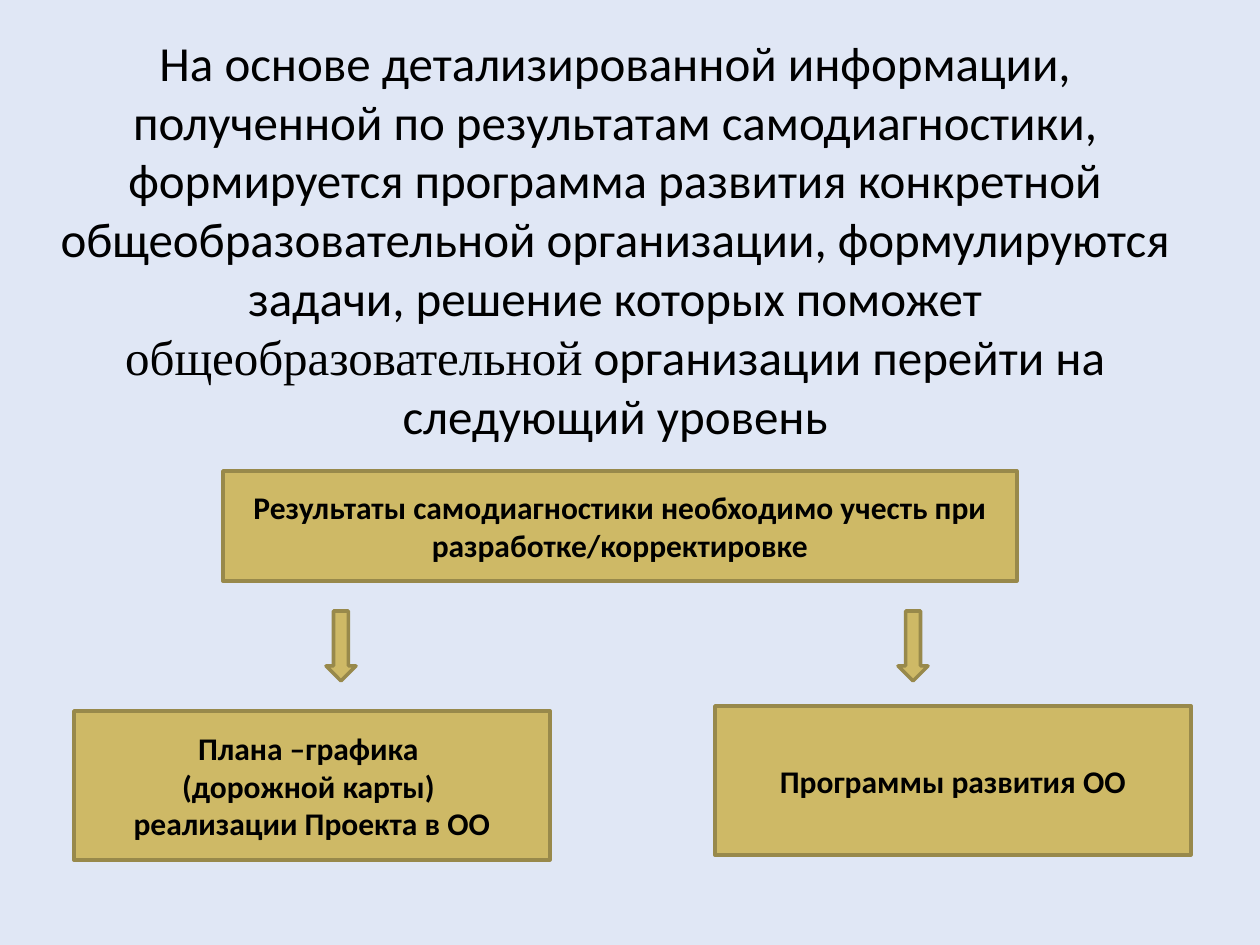
import pptx
import pptx.util
import pptx.dml.color
import pptx.enum.shapes
import pptx.enum.text

SCALE = 914400 / 126
SHAPE = pptx.enum.shapes.MSO_SHAPE
ANCHOR = pptx.enum.text.MSO_ANCHOR
CENTER = pptx.enum.text.PP_ALIGN.CENTER


def px(n):
    return pptx.util.Emu(round(n * SCALE))


def paint(color, code):
    color.rgb = pptx.dml.color.RGBColor.from_string(code)


def style(run, face="Calibri", **form):
    for name, value in {"name": face, **form}.items():
        setattr(run.font, name, value)
    paint(run.font.color, "000000")


def head(slide, box, parts):
    """Place the opening statement, given as (text, font) parts."""
    title = slide.shapes.title
    for name, value in zip(("left", "top", "width", "height"), box):
        setattr(title, name, px(value))
    frame = title.text_frame
    form = {"word_wrap": True, "vertical_anchor": ANCHOR.TOP,
            "auto_size": pptx.enum.text.MSO_AUTO_SIZE.NONE}
    for name, value in form.items():
        setattr(frame, name, value)
    para = frame.paragraphs[0]
    para.alignment = CENTER
    para.space_before = pptx.util.Pt(5.6)
    for text, face in parts:
        run = para.add_run()
        run.text = text
        style(run, face, size=pptx.util.Pt(28), bold=False)


def block(slide, kind, box, lines=()):
    """Add a gold shape with one centred paragraph per line."""
    shape = slide.shapes.add_shape(kind, *map(px, box))
    shape.shadow.inherit = False
    shape.fill.solid()
    paint(shape.fill.fore_color, "CEB966")
    paint(shape.line.color, "98894B")
    shape.line.width = pptx.util.Pt(2)
    frame = shape.text_frame
    frame.word_wrap = True
    frame.vertical_anchor = ANCHOR.MIDDLE
    for i, line in enumerate(lines):
        para = frame.add_paragraph() if i else frame.paragraphs[0]
        para.alignment = CENTER
        run = para.add_run()
        run.text = line
        style(run, size=pptx.util.Pt(18), bold=True)


def chart(slide, box, root, leaves):
    """Draw the root block, with an arrow down to each leaf block."""
    left, top, width, height = box
    block(slide, SHAPE.RECTANGLE, (left + 149, top, 794, 110), root)
    for x, y, mid, lines in leaves:
        block(slide, SHAPE.DOWN_ARROW, (left + mid - 15, top + 140, 30, 70))
        block(slide, SHAPE.RECTANGLE,
              (left + x, top + height - 149 - y, 476, 149), lines)


def main():
    deck = pptx.Presentation()
    deck.slide_width, deck.slide_height = px(1260), px(945)
    slide = deck.slides.add_slide(deck.slide_layouts[5])
    slide.background.fill.solid()
    paint(slide.background.fill.fore_color, "E0E7F5")
    head(slide, (35, 26, 1160, 397), [
        ("На основе детализированной информации, полученной по результатам "
         "самодиагностики, формируется программа развития конкретной "
         "общеобразовательной организации, формулируются задачи, решение "
         "которых поможет ", "Calibri"),
        ("общеобразовательной", "Times New Roman"),
        (" организации перейти на следующий уровень", "Calibri")])
    chart(slide, (74, 471, 1117, 389),
          ["Результаты самодиагностики необходимо учесть при "
           "разработке/корректировке"],
          [(0, 0, 267, ["Плана –графика ", "(дорожной карты) ",
                        "реализации Проекта в ОО"]),
           (641, 5, 839, ["Программы развития ОО"])])
    deck.save("out.pptx")


if __name__ == "__main__":
    main()
